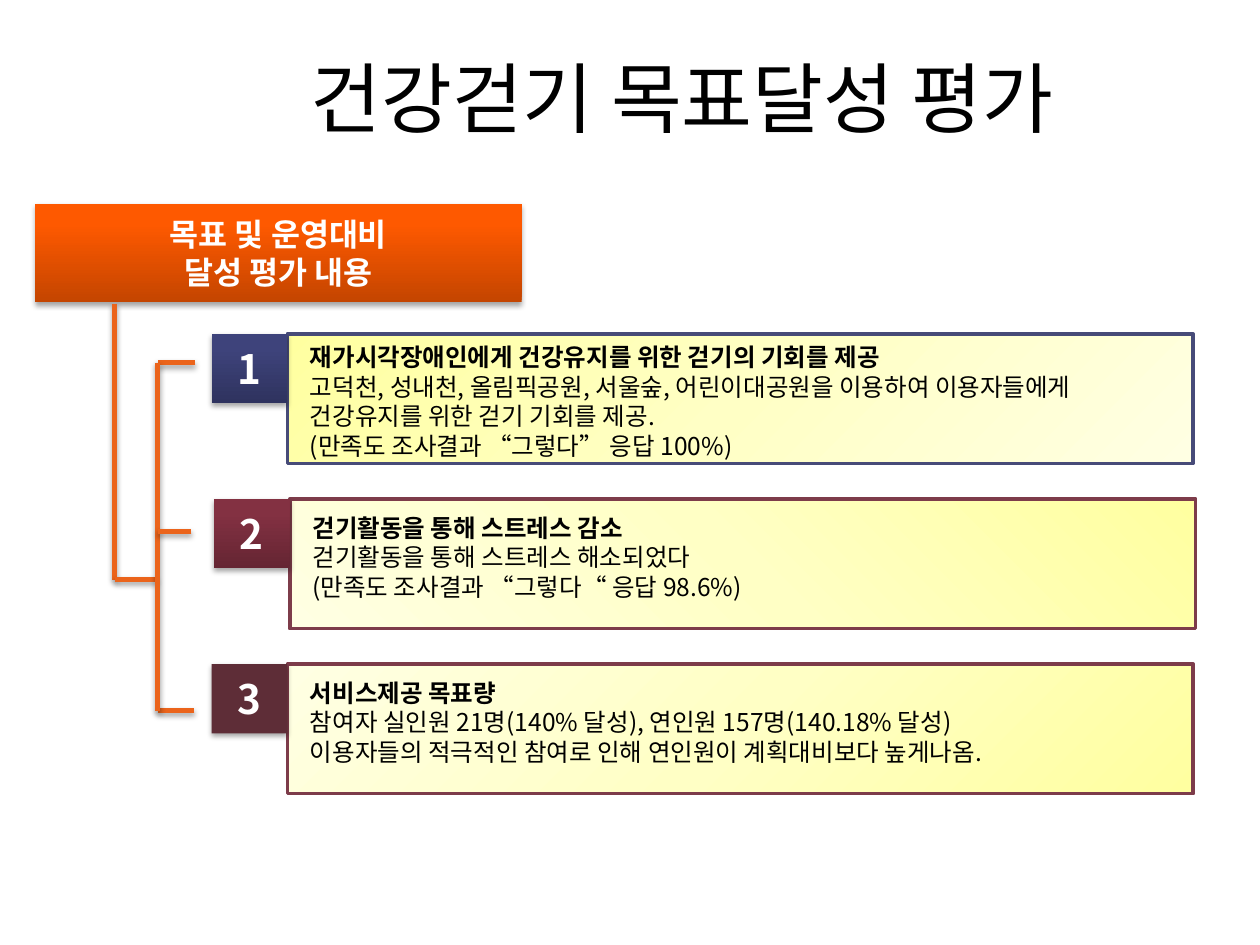
"""Build a slide that rates how far the walking programme met its goals."""
from pptx import Presentation
from pptx.dml.color import RGBColor
from pptx.enum.shapes import MSO_CONNECTOR, MSO_SHAPE
from pptx.enum.text import MSO_ANCHOR, PP_ALIGN
from pptx.oxml import parse_xml
from pptx.oxml.ns import nsdecls
from pptx.util import Inches, Pt
from lxml import etree

RECTANGLE = MSO_SHAPE.RECTANGLE
STRAIGHT = MSO_CONNECTOR.STRAIGHT
TOP, MIDDLE = MSO_ANCHOR.TOP, MSO_ANCHOR.MIDDLE
LEFT, CENTER = PP_ALIGN.LEFT, PP_ALIGN.CENTER
FONT = "Noto Sans CJK KR"
COLORS = {
    "black": "000000", "white": "FFFFFF", "branch": "EB641B",
    "navy": "474B78", "wine": "7D3C4A", "plum": "5E2D37",
}
GRADIENTS = {
    "header": [(0, "C44500"), (80, "FE5900"), (100, "FF5A00")],
    "blue": [(0, "2F335F"), (80, "3E437B"), (100, "3D427D")],
    "red": [(0, "652533"), (80, "833142"), (100, "852F42")],
    "yellow": [(0, "FFFFA0"), (50, "FFFFC5"), (100, "FFFFE3")],
}
RISING = '<a:lin ang="16200000" scaled="0"/>'
FALLING = '<a:lin ang="2700000" scaled="0"/>'
LEANING = '<a:lin ang="8100000" scaled="0"/>'
CORNER = '<a:path path="circle"><a:fillToRect l="100000" t="100000"/></a:path>'
SHADOW = (
    '<a:outerShdw blurRad="39370" dist="22860" dir="5400000" rotWithShape="0">'
    '<a:srgbClr val="000000"><a:alpha val="35000"/></a:srgbClr></a:outerShdw>'
)


def write(shape, lines, size, color="black", bold_lines=0, align=LEFT,
          anchor=MIDDLE, insets=(0.1, 0.05, 0.1, 0.05)):
    """Fill a shape with one paragraph per line, the first ones in bold."""
    frame = shape.text_frame
    frame.word_wrap = True
    frame.vertical_anchor = anchor
    frame.margin_left, frame.margin_top, frame.margin_right, frame.margin_bottom = map(Inches, insets)
    for index, line in enumerate(lines):
        para = frame.add_paragraph() if index else frame.paragraphs[0]
        para.alignment = align
        span = para.add_run()
        span.text = line
        span.font.size = Pt(size)
        span.font.bold = index < bold_lines
        span.font.color.rgb = RGBColor.from_string(COLORS[color])
        span.font.name = FONT
        east_asian = parse_xml(f'<a:ea {nsdecls("a")} typeface="{FONT}"/>')
        span.font._element.append(east_asian)


def dress(shape, fill=None, direction=RISING, line=None, width=2, shadow=True):
    """Give a shape or connector its fill, line and shadow."""
    properties = shape._element.spPr
    if fill in GRADIENTS:
        shape.fill.background()
        stops = "".join(
            f'<a:gs pos="{position * 1000}"><a:srgbClr val="{color}"/></a:gs>'
            for position, color in GRADIENTS[fill]
        )
        gradient = parse_xml(
            f'<a:gradFill {nsdecls("a")} rotWithShape="1">'
            f"<a:gsLst>{stops}</a:gsLst>{direction}</a:gradFill>"
        )
        properties.replace(properties.find("{*}noFill"), gradient)
    elif fill:
        shape.fill.solid()
        shape.fill.fore_color.rgb = RGBColor.from_string(COLORS[fill])
    if line:
        shape.line.color.rgb = RGBColor.from_string(COLORS[line])
        shape.line.width = Pt(width)
    else:
        shape.line.fill.background()
    effects = etree.SubElement(properties, properties.tag.replace("spPr", "effectLst").replace(
        "presentationml", "drawingml"))
    properties.remove(effects)
    properties.append(parse_xml(
        f'<a:effectLst {nsdecls("a")}>{SHADOW if shadow else ""}</a:effectLst>'
    ))


deck = Presentation()
deck.slide_width, deck.slide_height = Inches(10), Inches(7.5)
page = deck.slides.add_slide(deck.slide_layouts[5])

title = page.shapes.title
title.left, title.top, title.width, title.height = map(Inches, (1.75, 0.18, 7.33, 1.17))
write(title, ["건강걷기 목표달성 평가"], 44, align=CENTER)

header = page.shapes.add_shape(RECTANGLE, *map(Inches, (0.28, 1.62, 3.86, 0.78)))
dress(header, "header")
write(header, ["목표 및 운영대비", "달성 평가 내용"], 18, color="white", bold_lines=2,
      align=CENTER, insets=(0.22, 0, 0.22, 0))

GOALS = [
    (1.68, "blue", FALLING, "navy", MIDDLE, (0.18, 0.07, 0.18, 0.03), [
        "재가시각장애인에게 건강유지를 위한 걷기의 기회를 제공",
        "고덕천, 성내천, 올림픽공원, 서울숲, 어린이대공원을 이용하여 이용자들에게 "
        "건강유지를 위한 걷기 기회를 제공.",
        "(만족도 조사결과 “그렇다” 응답 100%)",
    ]),
    (1.7, "red", LEANING, "wine", TOP, (0.18, 0.11, 0.18, 0), [
        "걷기활동을 통해 스트레스 감소",
        "걷기활동을 통해 스트레스 해소되었다",
        "(만족도 조사결과 “그렇다“ 응답 98.6%)",
    ]),
    (1.68, "plum", CORNER, "wine", TOP, (0.18, 0.11, 0.18, 0), [
        "서비스제공 목표량",
        "참여자 실인원 21명(140% 달성), 연인원 157명(140.18% 달성)",
        "이용자들의 적극적인 참여로 인해 연인원이 계획대비보다 높게나옴.",
    ]),
]
for index, (left, badge_fill, direction, border, anchor, insets, lines) in enumerate(GOALS):
    top = 2.65 + 1.31 * index
    box = page.shapes.add_shape(RECTANGLE, *map(Inches, (left + 0.6, top, 7.19, 1.03)))
    dress(box, "yellow", direction, line=border, shadow=False)
    write(box, lines, 14, bold_lines=1, anchor=anchor, insets=insets)
    badge = page.shapes.add_shape(RECTANGLE, *map(Inches, (left, top, 0.6, 0.55)))
    dress(badge, badge_fill)
    write(badge, [str(index + 1)], 23.1, color="white", bold_lines=1, align=CENTER)

STEM, SPINE = 0.91, 1.25
BRANCHES = [
    (STEM, 2.41, STEM, 4.6),
    (SPINE, 4.6, STEM, 4.6),
    (1.55, 2.88, SPINE, 2.88),
    (1.54, 5.64, SPINE, 5.64),
    (SPINE, 2.88, SPINE, 5.64),
    (1.52, 4.22, SPINE, 4.22),
]
for ends in BRANCHES:
    branch = page.shapes.add_connector(STRAIGHT, *map(Inches, ends))
    dress(branch, line="branch", width=3)

deck.save("out.pptx")
